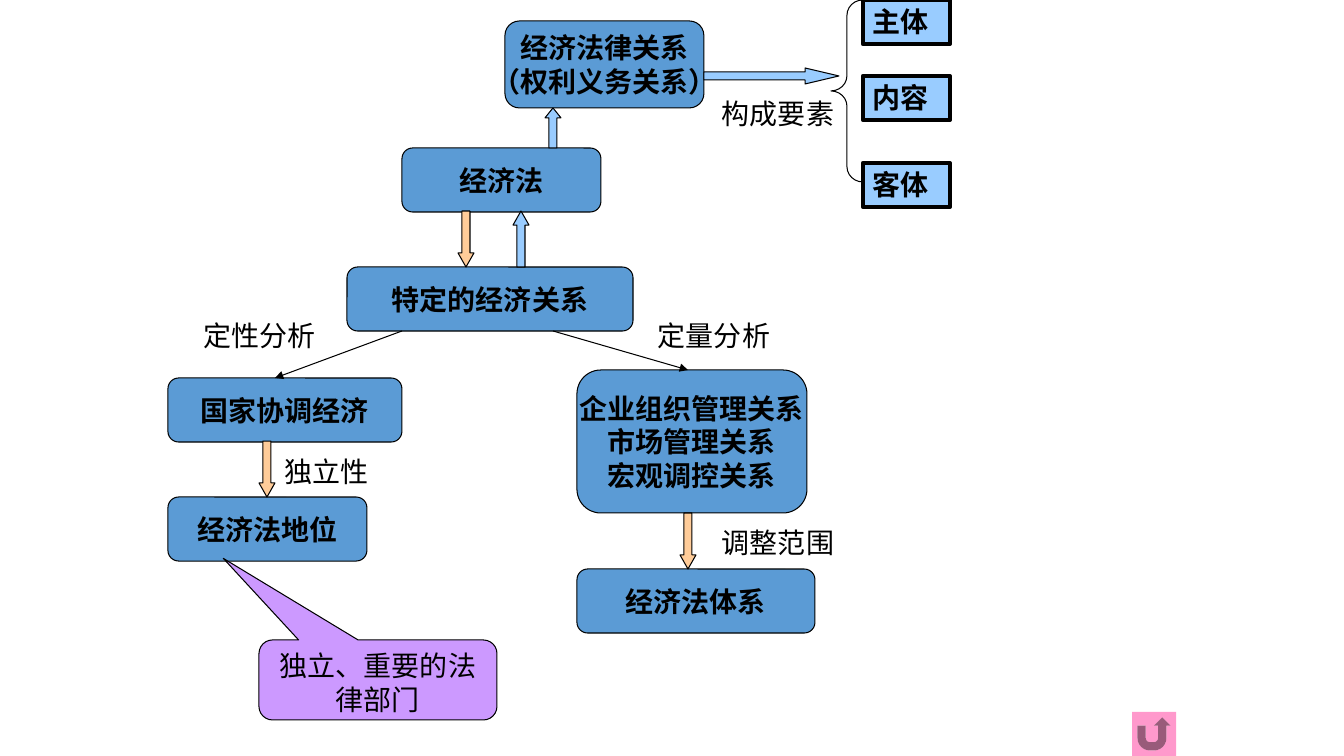
from dataclasses import dataclass
from lxml import etree
from pptx import Presentation
from pptx.dml.color import RGBColor
from pptx.enum.shapes import MSO_CONNECTOR, MSO_SHAPE
from pptx.enum.text import MSO_ANCHOR, PP_ALIGN
from pptx.oxml.ns import qn
from pptx.util import Pt

STEP = MSO_SHAPE.FLOWCHART_ALTERNATE_PROCESS
DOWN, UP, RIGHT = MSO_SHAPE.DOWN_ARROW, MSO_SHAPE.UP_ARROW, MSO_SHAPE.RIGHT_ARROW
BRACE, RECT = MSO_SHAPE.LEFT_BRACE, MSO_SHAPE.RECTANGLE
CALLOUT = MSO_SHAPE.ROUNDED_RECTANGULAR_CALLOUT
BACK = MSO_SHAPE.ACTION_BUTTON_RETURN
STRAIGHT = MSO_CONNECTOR.STRAIGHT
TOP, MIDDLE = MSO_ANCHOR.TOP, MSO_ANCHOR.MIDDLE
LEFT, CENTER, END = PP_ALIGN.LEFT, PP_ALIGN.CENTER, PP_ALIGN.RIGHT


@dataclass(frozen=True)
class Theme:
    font: str = "Cabin"
    size: int = 20
    ink: str = "000000"
    step: str = "5B9BD5"
    sky: str = "99CCFF"
    peach: str = "FFCC99"
    note: str = "CC99FF"
    back: str = "FF99CC"
    thin: float = 0.75
    thick: float = 3


THEME = Theme()

# Content: lengths in px, boxes as left, top, width, height
WIDTH, HEIGHT = 1344, 756
SCALE = 12192000 / WIDTH

STEPS = [
    ((402, 148, 199, 64), ["经济法"]),
    ((577, 370, 230, 143), ["企业组织管理关系", "市场管理关系", "宏观调控关系"]),
    ((168, 378, 234, 64), ["国家协调经济"]),
    ((347, 267, 286, 64), ["特定的经济关系"]),
    ((168, 497, 199, 64), ["经济法地位"]),
    ((577, 569, 238, 64), ["经济法体系"]),
    ((505, 21, 199, 87), ["经济法律关系", "（权利义务关系）"]),
]
ARROWS = [
    (DOWN, (458, 211, 16, 56), THEME.peach, 0.88),
    (DOWN, (259, 441, 16, 56), THEME.peach, 0.88),
    (DOWN, (680, 513, 16, 56), THEME.peach, 0.88),
    (UP, (513, 211, 16, 56), THEME.sky, 0.88),
    (UP, (545, 108, 16, 40), THEME.sky, 0.62),
    (RIGHT, (704, 68, 135, 16), THEME.sky, 2.12),
]
BRANCHES = [(402, 331, 275, 378), (553, 331, 688, 370)]
LABELS = [
    ((168, 314, 158, 44), "定性分析", END),
    ((648, 314, 151, 44), "定量分析", LEFT),
    ((275, 450, 127, 44), "独立性", LEFT),
    ((712, 92, 151, 44), "构成要素", LEFT),
    ((712, 521, 174, 44), "调整范围", LEFT),
]
PARTS = [("主体", 0), ("内容", 76), ("客体", 163)]
NOTE = "独立、重要的法律部门"


def emu(*lengths):
    return [round(n * SCALE) for n in lengths]


def color(code):
    return RGBColor.from_string(code)


def write(shape, lines, bold=False, align=LEFT, anchor=TOP, wrap=True):
    frame = shape.text_frame
    frame.word_wrap = wrap
    frame.vertical_anchor = anchor
    for i, line in enumerate(lines):
        para = frame.add_paragraph() if i else frame.paragraphs[0]
        para.alignment = align
        run = para.add_run()
        run.text = line
        run.font.name = THEME.font
        run.font.size = Pt(THEME.size)
        run.font.bold = bold
        run.font.color.rgb = color(THEME.ink)


def draw(kind, box, fill=None, line=THEME.thin, adjust=()):
    shape = slide.shapes.add_shape(kind, *emu(*box))
    shape.shadow.inherit = False
    if fill:
        shape.fill.solid()
        shape.fill.fore_color.rgb = color(fill)
    else:
        shape.fill.background()
    if line:
        shape.line.color.rgb = color(THEME.ink)
        shape.line.width = Pt(line)
    else:
        shape.line.fill.background()
    for i, value in enumerate(adjust):
        shape.adjustments[i] = value
    return shape


def branch(ends):
    link = slide.shapes.add_connector(STRAIGHT, *emu(*ends))
    link.line.color.rgb = color(THEME.ink)
    link.line.width = Pt(THEME.thin)
    tail = etree.SubElement(link.line._get_or_add_ln(), qn("a:tailEnd"))
    tail.set("type", "triangle")
    etree.SubElement(link._element.spPr, qn("a:effectLst"))


deck = Presentation()
deck.slide_width, deck.slide_height = emu(WIDTH, HEIGHT)
slide = deck.slides.add_slide(deck.slide_layouts[6])

# Return button
draw(BACK, (1132, 712, 44, 44), THEME.back, line=None)

# Steps of the flow
for box, lines in STEPS:
    write(draw(STEP, box, THEME.step), lines, bold=True,
          align=CENTER, anchor=MIDDLE, wrap=False)

# Arrows and branches between steps
for kind, box, fill, head in ARROWS:
    draw(kind, box, fill, adjust=(0.5, head))
for ends in BRANCHES:
    branch(ends)

# Labels beside the arrows
for box, text, align in LABELS:
    write(slide.shapes.add_textbox(*emu(*box)), [text], align=align)

# Callout under the legal status
note = draw(CALLOUT, (259, 640, 238, 80), THEME.note, adjust=(-0.65, -1.52, 0.17))
write(note, [NOTE], align=CENTER)

# Brace and the three elements
draw(BRACE, (831, 0, 32, 182), adjust=(0.48, 0.5))
for text, top in PARTS:
    write(draw(RECT, (863, top, 87, 44), THEME.sky, THEME.thick), [text], bold=True)

deck.save("out.pptx")
